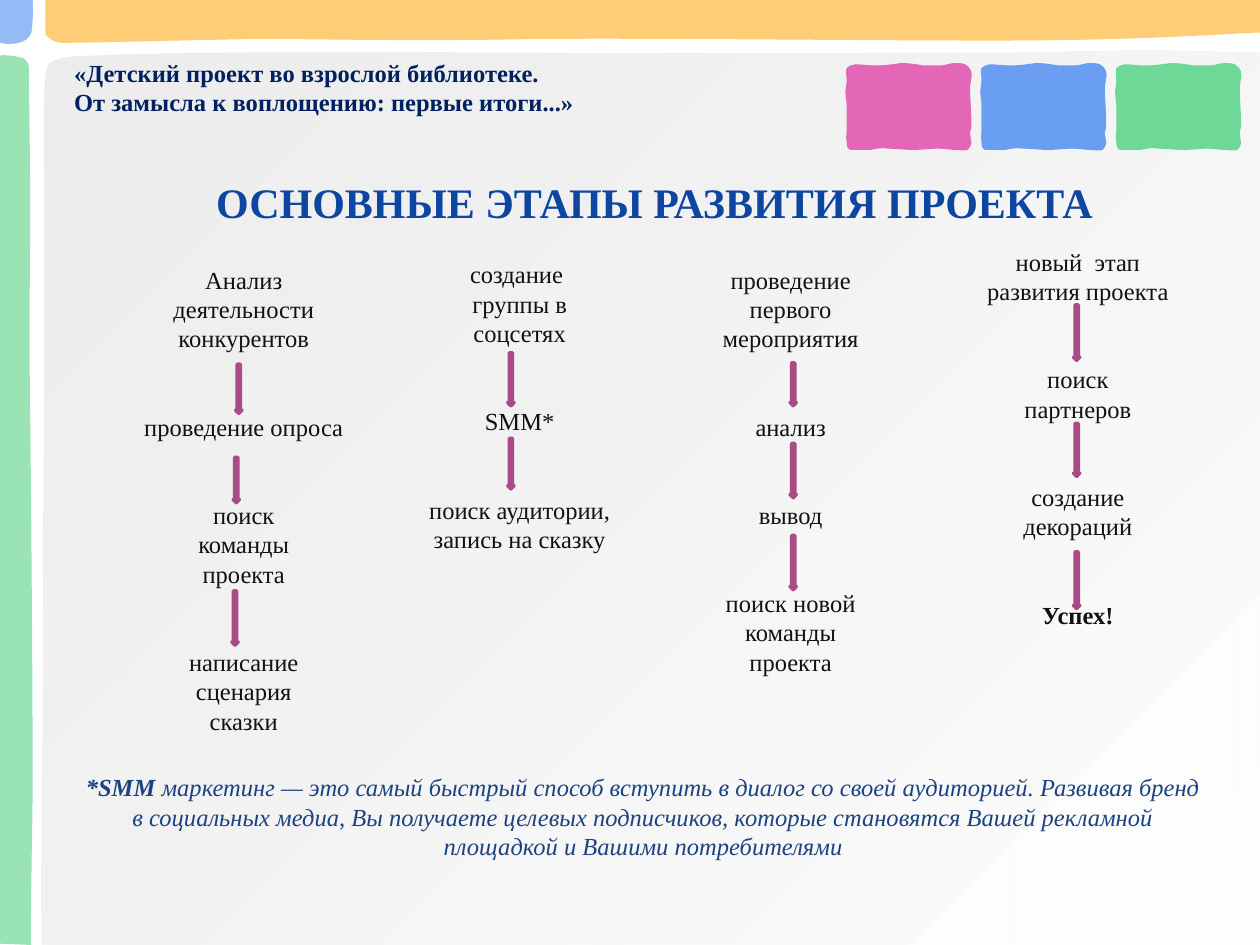
"""Builds the slide on the main stages of the library project."""
import lxml.etree
import pptx
import pptx.dml.color
import pptx.enum.shapes
import pptx.enum.text
import pptx.oxml.ns
import pptx.util

Inches = pptx.util.Inches
Pt = pptx.util.Pt
qn = pptx.oxml.ns.qn
rgb = pptx.dml.color.RGBColor.from_string

deck = pptx.Presentation()
deck.slide_width = Inches(10)
deck.slide_height = Inches(7.5)
slide = deck.slides.add_slide(deck.slide_layouts[6])


def add_outline(segments, colours, opacity=100, shift=0):
    """Draw a closed outline of lines (2 numbers) and Bezier curves (6 numbers)."""
    units = [[round(value * 100) for value in segment] for segment in segments]
    builder = slide.shapes.build_freeform(*units[0], scale=Inches(0.01))
    builder.add_line_segments([segment[-2:] for segment in units[1:]], close=True)
    outline = builder.convert_to_shape(Inches(shift), 0)
    left = min(segment[-2] for segment in units)
    top = min(segment[-1] for segment in units)
    lines = list(outline._element.spPr.iter(qn("a:lnTo")))
    for line, segment in zip(lines, units[1:]):
        if len(segment) == 6:
            curve = lxml.etree.Element(qn("a:cubicBezTo"))
            for x, y in zip(segment[::2], segment[1::2]):
                lxml.etree.SubElement(curve, qn("a:pt"), x=str(x - left), y=str(y - top))
            line.getparent().replace(line, curve)
    outline.shadow.inherit = False
    outline.line.fill.background()
    if len(colours) == 1:
        outline.fill.solid()
        outline.fill.fore_color.rgb = rgb(colours[0])
    else:
        outline.fill.gradient()
        outline.fill.gradient_angle = 315
        for stop, colour in zip(outline.fill.gradient_stops, colours):
            stop.color.rgb = rgb(colour)
    if opacity < 100:
        tint = next(outline._element.spPr.iter(qn("a:srgbClr")))
        lxml.etree.SubElement(tint, qn("a:alpha"), val=str(opacity * 1000))


def add_text(place, steps, colour, size=14, centred=True, **formats):
    """Write steps of lines, each line a list of (text, bold) runs."""
    frame = slide.shapes.add_textbox(*map(Inches, place)).text_frame
    frame.word_wrap = True
    paragraph = frame.paragraphs[0]
    for step_index, lines in enumerate(steps):
        for line_index, runs in enumerate(lines):
            if step_index or line_index:
                paragraph = frame.add_paragraph()
            if step_index and not line_index:
                paragraph.space_before = Pt(33.6)
            if centred:
                paragraph.alignment = pptx.enum.text.PP_ALIGN.CENTER
            for text, bold in runs:
                run = paragraph.add_run()
                run.text = text
                values = {"name": "Times New Roman", "size": Pt(size), "bold": bold, **formats}
                for name, value in values.items():
                    setattr(run.font, name, value)
                run.font.color.rgb = rgb(colour)


panel = [
    (10, 7.5), (10, 0.42), (8.86, 0.38, 8.55, 0.42, 7.6, 0.42),
    (6.66, 0.42, 5.5, 0.43, 4.33, 0.42), (3.16, 0.41, 1.23, 0.41, 0.57, 0.45),
    (0.36, 0.48, 0.36, 0.49, 0.35, 0.73), (0.34, 0.96, 0.35, 1.1, 0.35, 1.82),
    (0.35, 2.56, 0.34, 4.12, 0.34, 5.06), (0.34, 6.01, 0.32, 6.62, 0.33, 7.5),
]
top_band = [
    (10, 0), (10, 0.26), (10.01, 0.25, 9.28, 0.31, 8.32, 0.32),
    (7.36, 0.33, 5.31, 0.3, 4.26, 0.31), (3.21, 0.33, 2.65, 0.31, 2.03, 0.31),
    (1.4, 0.32, 0.77, 0.34, 0.49, 0.34), (0.41, 0.34, 0.36, 0.27, 0.36, 0.27),
    (0.36, 0.27, 0.36, 0.14, 0.36, 0),
]
left_band = [
    (0, 7.49), (0.25, 7.5), (0.24, 7.51, 0.25, 6.98, 0.26, 6.28),
    (0.26, 5.58, 0.25, 4.07, 0.24, 3.3), (0.23, 2.54, 0.24, 2.12, 0.24, 1.67),
    (0.24, 1.21, 0.23, 0.75, 0.23, 0.54), (0.23, 0.48, 0.18, 0.46, 0.18, 0.46),
    (0.07, 0.43, 0, 0.44, 0, 0.44),
]
corner = [
    (0, 0), (0.26, 0), (0.27, 0.12, 0.25, 0.26, 0.25, 0.26),
    (0.23, 0.31, 0.19, 0.33, 0.15, 0.34), (0.07, 0.36, 0, 0.34, 0, 0.34),
]
tile = [
    (6.72, 0.54), (6.74, 0.52, 6.75, 0.52, 6.79, 0.51),
    (6.83, 0.51, 6.89, 0.52, 6.95, 0.52), (7.01, 0.52, 7.09, 0.51, 7.15, 0.5),
    (7.21, 0.5, 7.28, 0.51, 7.33, 0.52), (7.38, 0.52, 7.42, 0.52, 7.46, 0.52),
    (7.5, 0.52, 7.54, 0.5, 7.58, 0.5), (7.61, 0.5, 7.63, 0.5, 7.66, 0.51),
    (7.68, 0.52, 7.7, 0.54, 7.71, 0.57), (7.72, 0.61, 7.7, 0.64, 7.7, 0.71),
    (7.7, 0.77, 7.71, 0.91, 7.71, 0.96), (7.71, 1.01, 7.71, 1.02, 7.7, 1.05),
    (7.7, 1.08, 7.71, 1.12, 7.71, 1.14), (7.7, 1.16, 7.7, 1.18, 7.68, 1.19),
    (7.66, 1.2, 7.61, 1.19, 7.58, 1.19), (7.54, 1.19, 7.5, 1.18, 7.44, 1.18),
    (7.39, 1.18, 7.31, 1.19, 7.25, 1.19), (7.18, 1.19, 7.11, 1.18, 7.05, 1.18),
    (7, 1.17, 6.96, 1.18, 6.91, 1.19), (6.86, 1.19, 6.78, 1.19, 6.75, 1.19),
    (6.72, 1.18, 6.72, 1.15, 6.72, 1.13), (6.71, 1.1, 6.72, 1.08, 6.72, 1.03),
    (6.72, 0.98, 6.72, 0.89, 6.72, 0.84), (6.72, 0.79, 6.71, 0.77, 6.71, 0.74),
    (6.71, 0.7, 6.72, 0.67, 6.72, 0.64), (6.72, 0.6, 6.71, 0.56, 6.72, 0.54),
]
add_outline(panel, ["E6E6E6", "FFFFFF"], 70)
add_outline(top_band, ["FEB93C"], 70)
add_outline(left_band, ["6ED896"], 70)
add_outline(corner, ["699EF3"], 70)
for position, colour in enumerate(["E466B7", "699EF3", "6ED896"]):
    add_outline(tile, [colour], shift=position * 1.07)

add_text(
    (0.49, 0.41, 6, 0.56),
    [[[("«Детский проект во взрослой библиотеке.", True)],
      [("От замысла к воплощению: первые итоги...»", True)]]],
    "002060", centred=False,
)
add_text((0.37, 1.35, 9.65, 0.5), [[[("ОСНОВНЫЕ ЭТАПЫ РАЗВИТИЯ ПРОЕКТА", True)]]], "0D46A1", 24)

stages = [
    ((1.02, 2.05, 1.83, 4.11), [
        ["Анализ деятельности", "конкурентов"], ["проведение опроса"],
        ["поиск", "команды", "проекта"], ["написание сценария", "сказки"]],
     [(1.87, 2.89, 0.39), (1.85, 3.63, 0.36), (1.84, 4.69, 0.43)]),
    ((3.21, 2.01, 1.83, 2.69), [
        ["создание ", "группы в", "соцсетях"], ["SММ*"],
        ["поиск аудитории,", "запись на сказку"]],
     [(4.03, 2.8, 0.42), (4.03, 3.48, 0.4)]),
    ((5.3, 2.05, 1.95, 4.58), [
        ["проведение", "первого", "мероприятия"], ["анализ"], ["вывод"],
        ["поиск новой", "команды", "проекта"]],
     [(6.27, 2.88, 0.34), (6.27, 3.52, 0.43), (6.27, 4.25, 0.43)]),
    ((7.64, 1.91, 1.83, 3.4), [
        ["новый  этап", "развития проекта"], ["поиск", "партнеров"],
        ["создание", "декораций"], ["Успех!"]],
     [(8.52, 2.42, 0.44), (8.52, 3.36, 0.42), (8.52, 4.38, 0.45)]),
]
for place, steps, arrows in stages:
    add_text(place, [[[(line, line == "Успех!")] for line in lines] for lines in steps], "111111")
    for left, top, height in arrows:
        arrow = slide.shapes.add_shape(
            pptx.enum.shapes.MSO_SHAPE.DOWN_ARROW,
            Inches(left), Inches(top), Inches(0.05), Inches(height))
        arrow.shadow.inherit = False
        arrow.fill.solid()
        arrow.fill.fore_color.rgb = rgb("FFEF00")
        arrow.line.color.rgb = rgb("A94B87")
        arrow.line.width = Pt(2)

definition = [
    "маркетинг — это самый быстрый способ вступить в диалог со своей аудиторией. Развивая бренд ",
    "в социальных медиа, Вы получаете целевых подписчиков, которые становятся Вашей рекламной ",
    "площадкой и Вашими потребителями ",
]
definition_lines = [[(line, False)] for line in definition]
definition_lines[0].insert(0, ("*SMM ", True))
add_text((0.26, 6.08, 9.74, 0.81), [definition_lines], "1C4381", italic=True)

deck.save("out.pptx")
